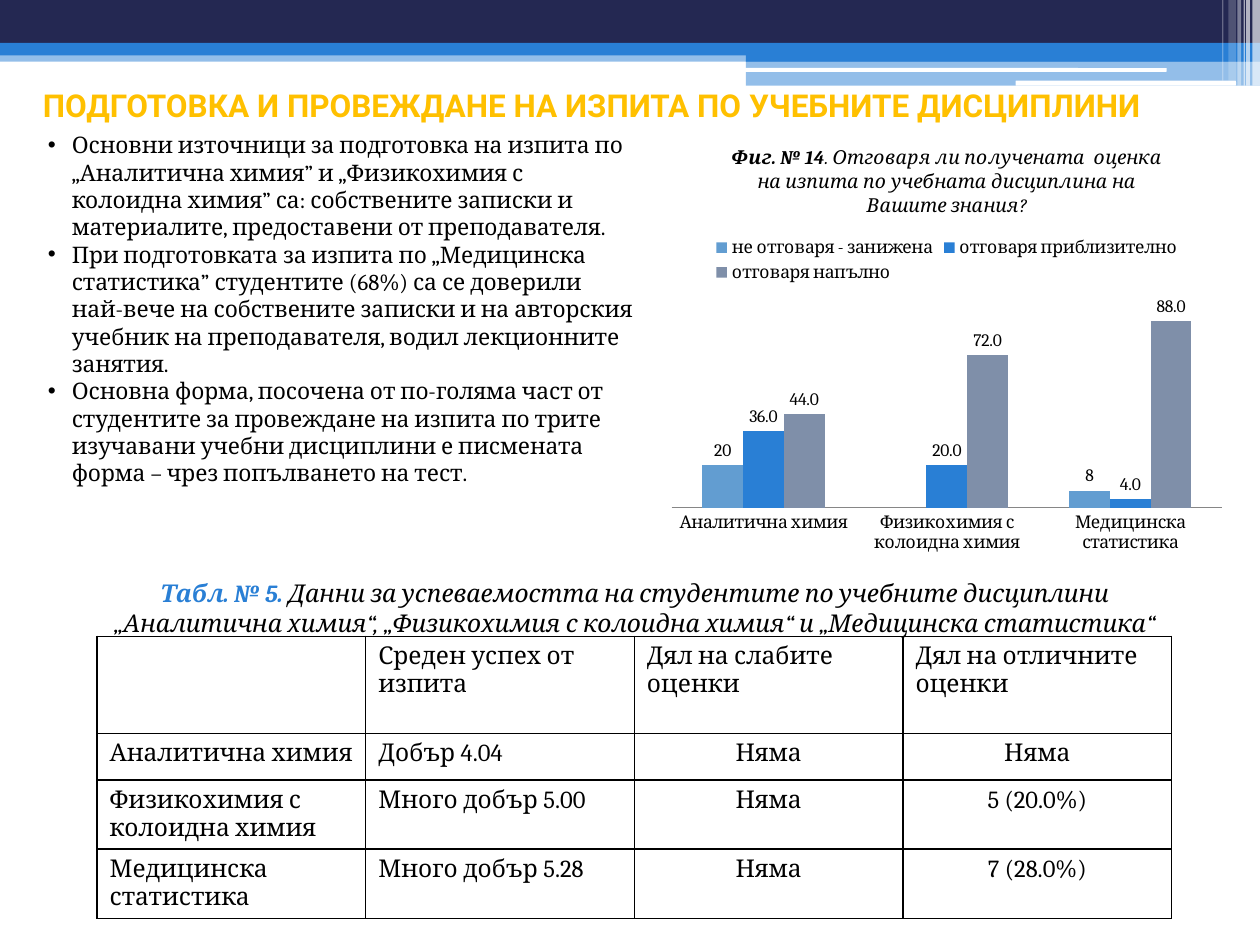
from lxml.etree import SubElement
from pptx import Presentation
from pptx.chart.data import CategoryChartData
from pptx.dml.color import RGBColor
from pptx.enum.chart import XL_CHART_TYPE as ChartType, XL_LEGEND_POSITION as LegendPosition
from pptx.enum.chart import XL_LABEL_POSITION as LabelPosition, XL_TICK_MARK as TickMark
from pptx.enum.shapes import MSO_SHAPE as Shape
from pptx.enum.text import MSO_ANCHOR as Anchor, MSO_AUTO_SIZE as AutoSize, PP_ALIGN as Align
from pptx.oxml import parse_xml
from pptx.oxml.ns import nsdecls, qn
from pptx.util import Inches, Pt

NAVY, BLUE, WHITE, BLACK = "242852", "297FD5", "FFFFFF", "000000"
GOLD, SKY, SLATE, GREY = "FFC000", "629DD1", "7F8FA9", "868686"

BANDS = [
    (0, 0.4, 10, 0.09, BLUE, 50),
    (0, 0, 10, 0.34, NAVY, 100),
    (0, 0.34, 10, 0.1, BLUE, 100),
    (5.92, 0.39, 4.08, 0.1, BLUE, 100),
    (5.92, 0.48, 4.08, 0.2, BLUE, 50),
]
HIGHLIGHTS = [(5.91, 0.54, 3.35, 0.03), (8.06, 0.64, 1.75, 0.04)]
STRIPES = [
    (9.94, 0.06, 0.68, 65),
    (9.89, 0.03, 0.68, 65),
    (9.87, 0.01, 0.68, 60),
    (9.82, 0.03, 0.68, 40),
    (9.75, 0.06, 0.64, 20),
    (9.7, 0.01, 0.64, 30),
]
SUBJECTS = ["Аналитична химия", "Физикохимия с колоидна химия", "Медицинска статистика"]
FINDINGS = [
    "Основни източници за подготовка на изпита по „Аналитична химия” и „Физикохимия с "
    "колоидна химия” са: собствените записки и материалите, предоставени от преподавателя.",
    "При подготовката за изпита по „Медицинска статистика” студентите (68%) са се доверили "
    "най-вече на собствените записки и на авторския учебник на преподавателя, водил "
    "лекционните занятия.",
    "Основна форма, посочена от по-голяма част от студентите за провеждане на изпита по трите "
    "изучавани учебни дисциплини е писмената форма – чрез попълването на тест.",
]
SERIES = [
    ("не отговаря - занижена", (20, None, 8), SKY, "General"),
    ("отговаря приблизително", (36, 20, 4), BLUE, "0.0"),
    ("отговаря напълно", (44, 72, 88), SLATE, "0.0"),
]
RESULTS = [
    ["", "Среден успех от изпита", "Дял на слабите оценки", "Дял на отличните оценки"],
    [SUBJECTS[0], "Добър 4.04", "Няма", "Няма"],
    [SUBJECTS[1], "Много добър 5.00", "Няма", "5 (20.0%)"],
    [SUBJECTS[2], "Много добър 5.28", "Няма", "7 (28.0%)"],
]


def color(value):
    return RGBColor.from_string(value)


def box(*lengths):
    return [Inches(length) for length in lengths]


def add_text(paragraph, text, size=14, font="Cambria", fill=BLACK, bold=False, italic=False):
    run = paragraph.add_run()
    run.text = text
    run.font.size = Pt(size)
    run.font.name = font
    run.font.color.rgb = color(fill)
    run.font.bold = bold
    run.font.italic = italic


class SlideBuilder:
    font = "Cambria"

    def __init__(self, presentation):
        self.slide = presentation.slides.add_slide(presentation.slide_layouts[1])
        self.shapes = self.slide.shapes

    def band(self, left, top, width, height, fill, alpha=100, kind=Shape.RECTANGLE):
        shape = self.shapes.add_shape(kind, *box(left, top, width, height))
        shape.shadow.inherit = False
        shape.fill.solid()
        shape.fill.fore_color.rgb = color(fill)
        shape.line.fill.background()
        if alpha < 100:
            fill_color = shape.fill._xPr.find(qn("a:solidFill"))[0]
            SubElement(fill_color, qn("a:alpha"), val=str(alpha * 1000))

    def placeholder(self, index, *place):
        shape = self.slide.placeholders[index]
        self.shapes._spTree.append(shape._element)
        shape.left, shape.top, shape.width, shape.height = box(*place)
        shape.text_frame.auto_size = AutoSize.NONE
        return shape.text_frame

    def title(self, text, *place):
        frame = self.placeholder(0, *place)
        frame.vertical_anchor = Anchor.MIDDLE
        paragraph = frame.paragraphs[0]
        paragraph.alignment = Align.LEFT
        add_text(paragraph, text, size=18, font="Roboto", fill=GOLD, bold=True)

    def bullets(self, items, *place):
        frame = self.placeholder(1, *place)
        for number, item in enumerate(items):
            paragraph = frame.add_paragraph() if number else frame.paragraphs[0]
            paragraph.space_before = Pt(0)
            properties = paragraph._p.get_or_add_pPr()
            properties.set("marL", str(Inches(0.19)))
            properties.set("indent", str(-Inches(0.19)))
            add_text(paragraph, item, size=13, font=self.font)

    def caption(self, label, text, *place):
        frame = self.shapes.add_textbox(*box(*place)).text_frame
        frame.word_wrap = True
        paragraph = frame.paragraphs[0]
        paragraph.alignment = Align.CENTER
        add_text(paragraph, label, fill=BLUE, bold=True, italic=True)
        add_text(paragraph, text, italic=True)

    def table(self, rows, heights, *place):
        table = self.shapes.add_table(len(rows), len(rows[0]), *box(*place)).table
        table.first_row = table.horz_banding = False
        for row, height in zip(table.rows, heights):
            row.height = Inches(height)
        for row_index, row in enumerate(rows):
            for column_index, text in enumerate(row):
                cell = table.cell(row_index, column_index)
                paragraph = cell.text_frame.paragraphs[0]
                if row_index and column_index > 1:
                    paragraph.alignment = Align.CENTER
                if text:
                    add_text(paragraph, text, font=self.font)
                self.borders(cell)
                cell.fill.background()

    def borders(self, cell):
        properties = cell._tc.get_or_add_tcPr()
        for side in ("lnL", "lnR", "lnT", "lnB"):
            properties.append(parse_xml(
                f'<a:{side} {nsdecls("a")} w="{Pt(1)}"><a:solidFill>'
                f'<a:srgbClr val="{BLACK}"/></a:solidFill></a:{side}>'))

    def column_chart(self, categories, series, label, text, *place):
        data = CategoryChartData()
        data.categories = categories
        for name, values, _, _ in series:
            data.add_series(name, values)
        chart = self.shapes.add_chart(ChartType.COLUMN_CLUSTERED, *box(*place), data).chart
        chart.font.size = Pt(10)
        chart.font.name = self.font
        chart.font.color.rgb = color(BLACK)
        chart.has_title = True
        heading = chart.chart_title.text_frame.paragraphs[0]
        add_text(heading, label, size=11, bold=True, italic=True)
        add_text(heading, text, size=11, italic=True)
        chart.chart_title.include_in_layout = False
        chart.has_legend = True
        chart.legend.position = LegendPosition.TOP
        chart.legend.include_in_layout = False
        chart.value_axis.visible = False
        chart.value_axis.has_major_gridlines = False
        chart.value_axis.minimum_scale = 0
        chart.value_axis.maximum_scale = 100
        chart.category_axis.major_tick_mark = TickMark.NONE
        chart.category_axis.format.line.color.rgb = color(GREY)
        plot = chart.plots[0]
        plot.gap_width = 150
        plot.overlap = 0
        plot.vary_by_categories = False
        for columns, (_, _, fill, number_format) in zip(plot.series, series):
            columns.format.fill.solid()
            columns.format.fill.fore_color.rgb = color(fill)
            labels = columns.data_labels
            labels.show_value = True
            labels.position = LabelPosition.OUTSIDE_END
            labels.number_format = number_format
            labels.number_format_is_linked = False


def main():
    presentation = Presentation()
    presentation.slide_width, presentation.slide_height = box(10, 7.5)
    builder = SlideBuilder(presentation)
    for band in BANDS:
        builder.band(*band)
    for highlight in HIGHLIGHTS:
        builder.band(*highlight, WHITE, kind=Shape.ROUNDED_RECTANGLE)
    for left, width, height, alpha in STRIPES:
        builder.band(left, 0, width, height, WHITE, alpha)
    builder.title("ПОДГОТОВКА И ПРОВЕЖДАНЕ НА ИЗПИТА ПО УЧЕБНИТЕ ДИСЦИПЛИНИ", 0.24, 0.6, 9.61, 0.47)
    builder.bullets(FINDINGS, 0.28, 0.99, 4.88, 3.54)
    builder.table(RESULTS, (0.77, 0.37, 0.55, 0.55), 0.77, 5.05, 8.53, 2.24)
    builder.caption(
        "Табл. № 5. ",
        "Данни за успеваемостта на студентите по учебните дисциплини „Аналитична химия“, "
        "„Физикохимия с колоидна химия“ и „Медицинска статистика“",
        0.59, 4.54, 8.9, 0.57)
    builder.column_chart(
        SUBJECTS, SERIES, "Фиг. № 14",
        ". Отговаря ли получената  оценка на изпита по учебната дисциплина на Вашите знания?",
        5.24, 0.99, 4.55, 3.46)
    presentation.save("out.pptx")


if __name__ == "__main__":
    main()
